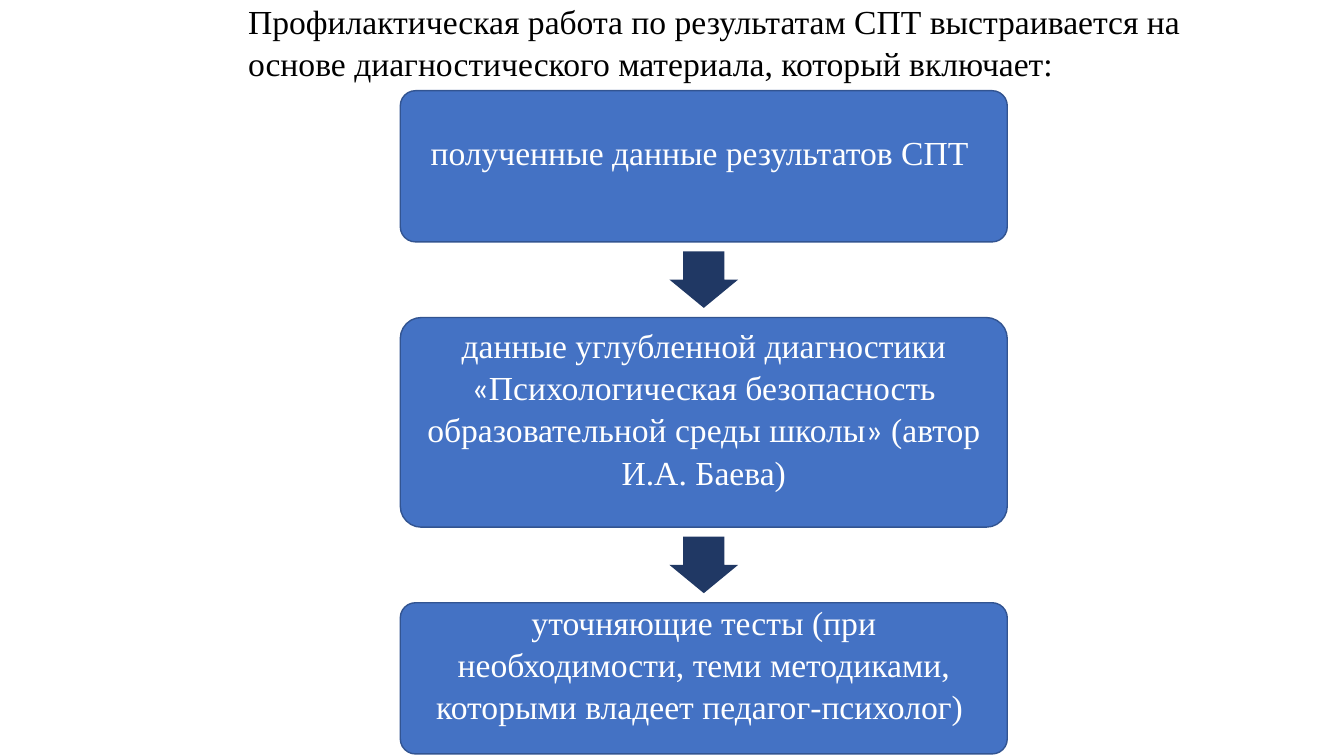
"""Build a slide with the diagnostic steps behind preventive work."""
from dataclasses import dataclass

import pptx
import pptx.util
import pptx.dml.color
import pptx.enum.shapes
import pptx.enum.text

Inches = pptx.util.Inches
Alignment = pptx.enum.text.PP_ALIGN
Anchor = pptx.enum.text.MSO_ANCHOR
Preset = pptx.enum.shapes.MSO_SHAPE


@dataclass(frozen=True)
class Theme:
    font: str = "Times New Roman"
    quote_font: str = "Calibri"
    size: int = 24
    line_spacing: float = 1.05
    title_color: str = "000000"
    step_text: str = "FFFFFF"
    step_fill: str = "4472C4"
    step_line: str = "325491"
    arrow_fill: str = "203864"


class StepSlide:
    def __init__(self, presentation, theme):
        self.theme = theme
        self.slide = presentation.slides.add_slide(presentation.slide_layouts[5])

    def color(self, value):
        return pptx.dml.color.RGBColor.from_string(value)

    def fill_text(self, frame, runs, color, alignment, anchor, insets):
        frame.word_wrap = True
        frame.auto_size = pptx.enum.text.MSO_AUTO_SIZE.NONE
        frame.vertical_anchor = anchor
        frame.margin_left = frame.margin_right = Inches(0.1)
        frame.margin_top, frame.margin_bottom = map(Inches, insets)
        paragraph = frame.paragraphs[0]
        paragraph.alignment = alignment
        paragraph.line_spacing = self.theme.line_spacing
        paragraph.font.size = pptx.util.Pt(self.theme.size)
        paragraph.font.color.rgb = self.color(color)
        if len(runs) == 1:
            paragraph.font.name = self.theme.font
        for text in runs:
            run = paragraph.add_run()
            run.text = text
            if len(runs) > 1:
                quote = text in ("«", "»")
                run.font.name = self.theme.quote_font if quote else self.theme.font

    def title(self, text, left, top, width, height):
        title = self.slide.shapes.title
        title.left, title.top = Inches(left), Inches(top)
        title.width, title.height = Inches(width), Inches(height)
        self.fill_text(title.text_frame, [text], self.theme.title_color,
                       Alignment.LEFT, Anchor.TOP, (0.05, 0.05))

    def shape(self, preset, left, top, width, height, fill):
        shape = self.slide.shapes.add_shape(
            preset, Inches(left), Inches(top), Inches(width), Inches(height))
        shape.shadow.inherit = False
        shape.fill.solid()
        shape.fill.fore_color.rgb = self.color(fill)
        return shape

    def step(self, runs, left, top, width, height):
        box = self.shape(Preset.ROUNDED_RECTANGLE, left, top, width, height,
                         self.theme.step_fill)
        box.adjustments[0] = 0.1
        box.line.color.rgb = self.color(self.theme.step_line)
        box.line.width = pptx.util.Pt(1)
        self.fill_text(box.text_frame, runs, self.theme.step_text,
                       Alignment.CENTER, Anchor.MIDDLE, (0, 0.3))

    def arrow(self, center_x, center_y, length, breadth):
        arrow = self.shape(Preset.RIGHT_ARROW, center_x - length / 2,
                           center_y - breadth / 2, length, breadth,
                           self.theme.arrow_fill)
        arrow.rotation = 90
        arrow.adjustments[0] = 0.6
        arrow.adjustments[1] = 0.5
        arrow.line.fill.background()


def main():
    presentation = pptx.Presentation()
    presentation.slide_width = Inches(13.33)
    presentation.slide_height = Inches(7.5)
    page = StepSlide(presentation, Theme())
    page.title("Профилактическая работа по результатам СПТ выстраивается на "
               "основе диагностического материала, который включает:",
               2.36, -0.06, 10.24, 1.14)

    steps = [
        (1.5, ["полученные данные результатов СПТ "]),
        (2.08, ["данные углубленной диагностики ", "«",
                "Психологическая безопасность образовательной среды школы",
                "»", " (автор И.А. Баева)"]),
        (1.5, ["уточняющие тесты (при необходимости, теми методиками, "
               "которыми владеет педагог-психолог) "]),
    ]
    left, top, width, gap = 3.97, 0.9, 6.02, 0.75
    for index, (height, runs) in enumerate(steps):
        if index:
            page.arrow(left + width / 2, top - gap / 2, 0.56, 0.68)
        page.step(runs, left, top, width, height)
        top += height + gap
    presentation.save("out.pptx")


if __name__ == "__main__":
    main()
